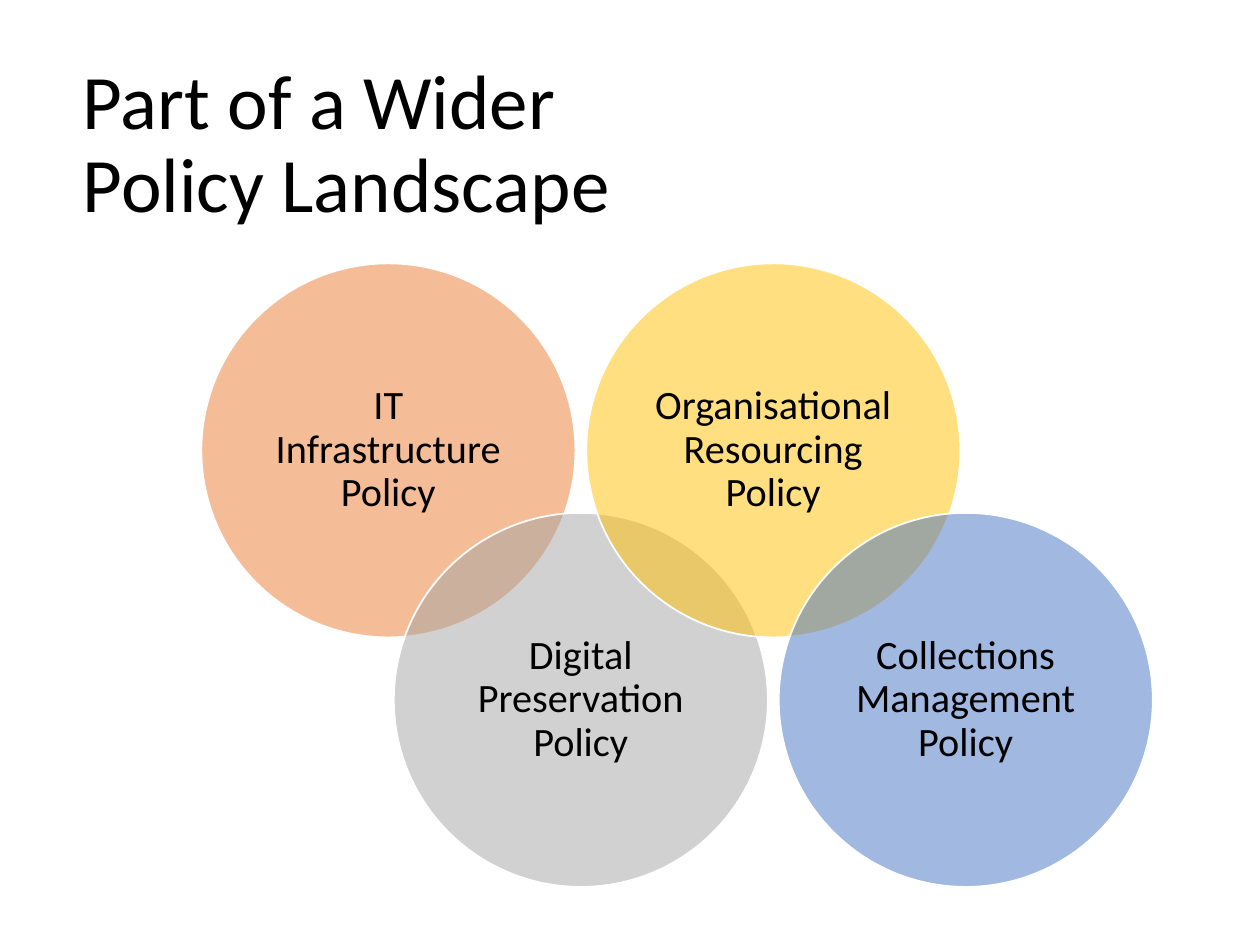
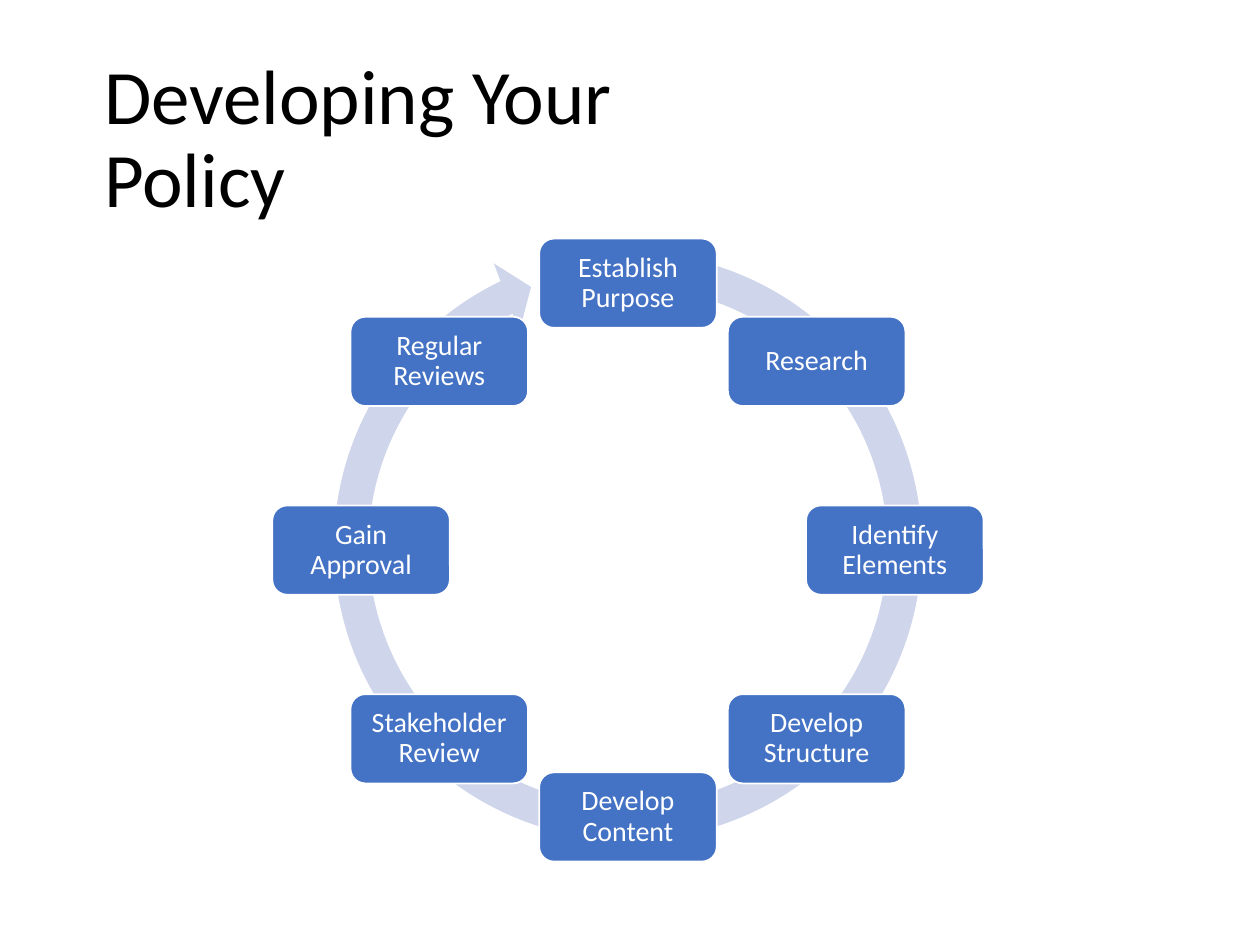
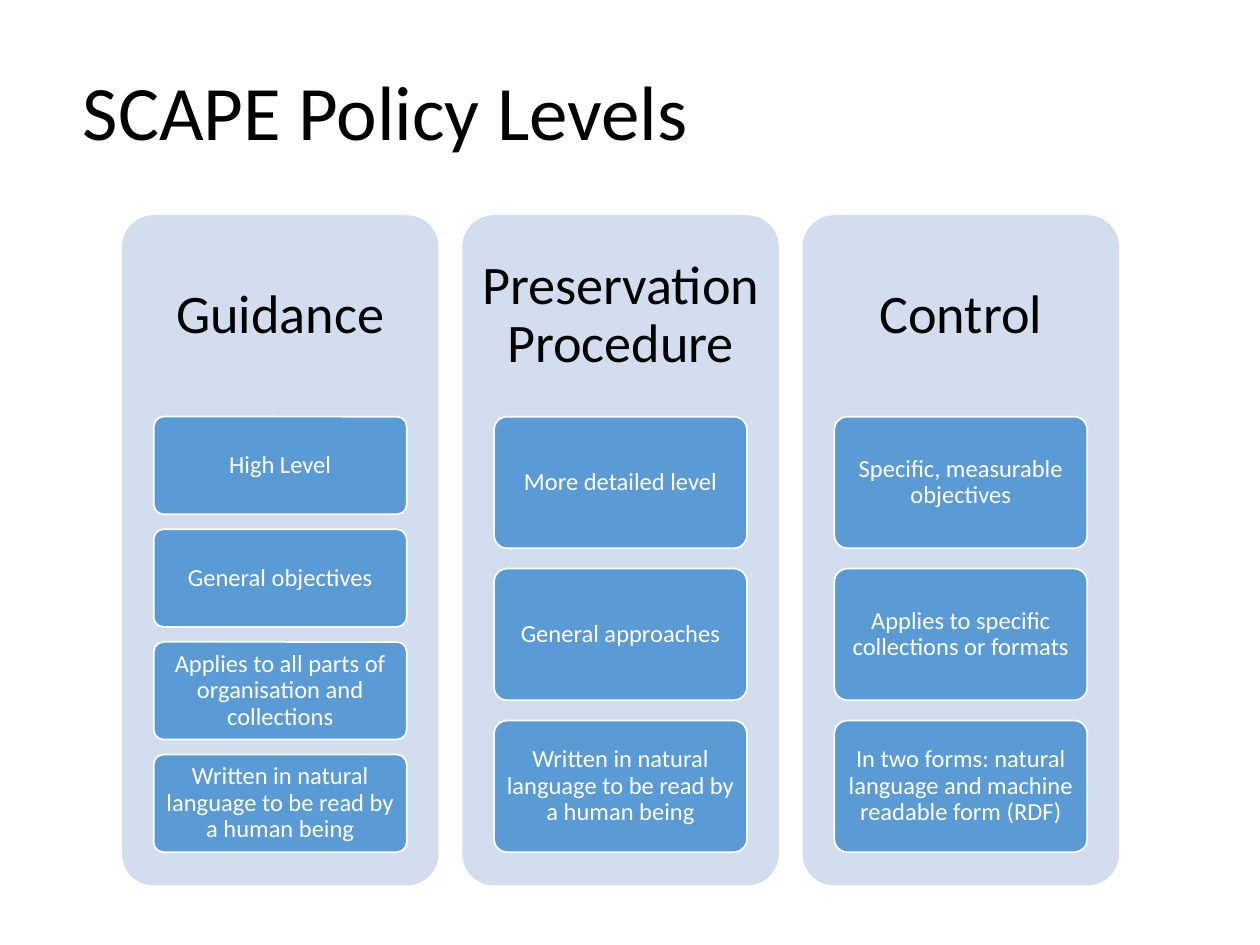
"""Build three slides on digital preservation policy."""
import dataclasses
import math

import lxml.etree
import pptx
import pptx.dml.color
import pptx.enum.shapes
import pptx.enum.text
import pptx.oxml.ns
import pptx.util

Cm = pptx.util.Cm
SHAPES = pptx.enum.shapes.MSO_SHAPE
ALIGN = pptx.enum.text.PP_ALIGN
ANCHOR = pptx.enum.text.MSO_ANCHOR


@dataclasses.dataclass(frozen=True)
class Theme:
    font: str = "Calibri"
    black: str = "000000"
    white: str = "FFFFFF"
    orange: str = "ED7D31"
    grey: str = "A5A5A5"
    gold: str = "FFC000"
    blue: str = "4472C4"
    pale_blue: str = "CFD5EA"
    sky: str = "5B9BD5"
    pale_sky: str = "D2DEEF"
    title_size: int = 44
    level_size: int = 31
    policy_size: int = 23
    step_size: int = 16
    point_size: int = 14


theme = Theme()


def write(shape, text, size, color, inset_x=0.25, inset_y=0.13,
          align=ALIGN.CENTER, anchor=ANCHOR.MIDDLE):
    frame = shape.text_frame
    frame.word_wrap = True
    frame.vertical_anchor = anchor
    frame.margin_left = frame.margin_right = Cm(inset_x)
    frame.margin_top = frame.margin_bottom = Cm(inset_y)
    paragraph = frame.paragraphs[0]
    paragraph.text = text
    paragraph.alignment = align
    paragraph.line_spacing = 0.9
    paragraph.font.name = theme.font
    paragraph.font.size = pptx.util.Pt(size)
    paragraph.font.color.rgb = pptx.dml.color.RGBColor.from_string(color)


def draw(slide, preset, left, top, width, height, fill, outlined=True):
    shape = slide.shapes.add_shape(preset, Cm(left), Cm(top), Cm(width), Cm(height))
    shape.shadow.inherit = False
    shape.fill.solid()
    shape.fill.fore_color.rgb = pptx.dml.color.RGBColor.from_string(fill)
    if outlined:
        shape.line.color.rgb = pptx.dml.color.RGBColor.from_string(theme.white)
        shape.line.width = pptx.util.Pt(1)
    else:
        shape.line.fill.background()
    return shape


deck = pptx.Presentation()
deck.slide_width = Cm(25.4)
deck.slide_height = Cm(19.05)

titles = [
    ("Part of a Wider Policy Landscape", 1.42, 1.14, 12.32),
    ("Developing Your Policy", 1.85, 1.04, 13.23),
    ("SCAPE Policy Levels", 1.42, 1.37, 13.23),
]
for title, left, top, width in titles:
    slide = deck.slides.add_slide(deck.slide_layouts[6])
    heading = slide.shapes.add_textbox(Cm(left), Cm(top), Cm(width), Cm(2.97))
    write(heading, title, theme.title_size, theme.black,
          align=ALIGN.LEFT, anchor=ANCHOR.TOP)
landscape, development, levels = deck.slides

policies = [
    ("IT Infrastructure Policy", theme.orange),
    ("Digital Preservation Policy", theme.grey),
    ("Organisational Resourcing Policy", theme.gold),
    ("Collections Management Policy", theme.blue),
]
for index, (policy, color) in enumerate(policies):
    circle = draw(landscape, SHAPES.OVAL, 4.06 + 3.88 * index,
                  5.31 + 5.03 * (index % 2), 7.54, 7.54, color)
    fill_color = circle._element.spPr.find(".//" + pptx.oxml.ns.qn("a:srgbClr"))
    lxml.etree.SubElement(fill_color, pptx.oxml.ns.qn("a:alpha"), val="50000")
    write(circle, policy, theme.policy_size, theme.black, 0.25, 0.25)

cycle = draw(development, SHAPES.CIRCULAR_ARROW, 6.35, 4.7, 12.62, 12.62,
             theme.pale_blue, outlined=False)
for index, value in enumerate([0.055, 3.307, 146.395, 168.797, 0.058]):
    cycle.adjustments[index] = value

steps = ["Establish Purpose", "Research", "Identify Elements", "Develop Structure",
         "Develop Content", "Stakeholder Review", "Gain Approval", "Regular Reviews"]
center_x, center_y, radius = 12.66, 11.09, 5.38
step_width, step_height = 3.58, 1.8
for index, step in enumerate(steps):
    angle = 2 * math.pi * index / len(steps)
    step_box = draw(development, SHAPES.ROUNDED_RECTANGLE,
                    center_x + radius * math.sin(angle) - step_width / 2,
                    center_y - radius * math.cos(angle) - step_height / 2,
                    step_width, step_height, theme.blue)
    write(step_box, step, theme.step_size, theme.white, 0.17, 0.17)

policy_levels = {
    "Guidance": [
        "High Level",
        "General objectives",
        "Applies to all parts of organisation and collections",
        "Written in natural language to be read by a human being",
    ],
    "Preservation Procedure": [
        "More detailed level",
        "General approaches",
        "Written in natural language to be read by a human being",
    ],
    "Control": [
        "Specific, measurable objectives",
        "Applies to specific collections or formats",
        "In two forms: natural language and machine readable form (RDF)",
    ],
}
panel_top, panel_width, level_height = 4.34, 6.38, 4.06
points_height, gap_ratio = 8.78, 2 / 13
for column, (level, points) in enumerate(policy_levels.items()):
    left = 2.46 + 6.86 * column
    panel = draw(levels, SHAPES.ROUNDED_RECTANGLE, left, panel_top, panel_width, 13.51,
                 theme.pale_sky, outlined=False)
    panel.adjustments[0] = 0.1
    level_name = levels.shapes.add_textbox(Cm(left), Cm(panel_top),
                                           Cm(panel_width), Cm(level_height))
    write(level_name, level, theme.level_size, theme.black, 0.33, 0.33)
    point_height = points_height / (len(points) + (len(points) - 1) * gap_ratio)
    for row, point in enumerate(points):
        point_box = draw(levels, SHAPES.ROUNDED_RECTANGLE, left + 0.64,
                         panel_top + level_height + row * point_height * (1 + gap_ratio),
                         5.1, point_height, theme.sky)
        point_box.adjustments[0] = 0.1
        write(point_box, point, theme.point_size, theme.white, 0.1, 0.08)

deck.save("out.pptx")
